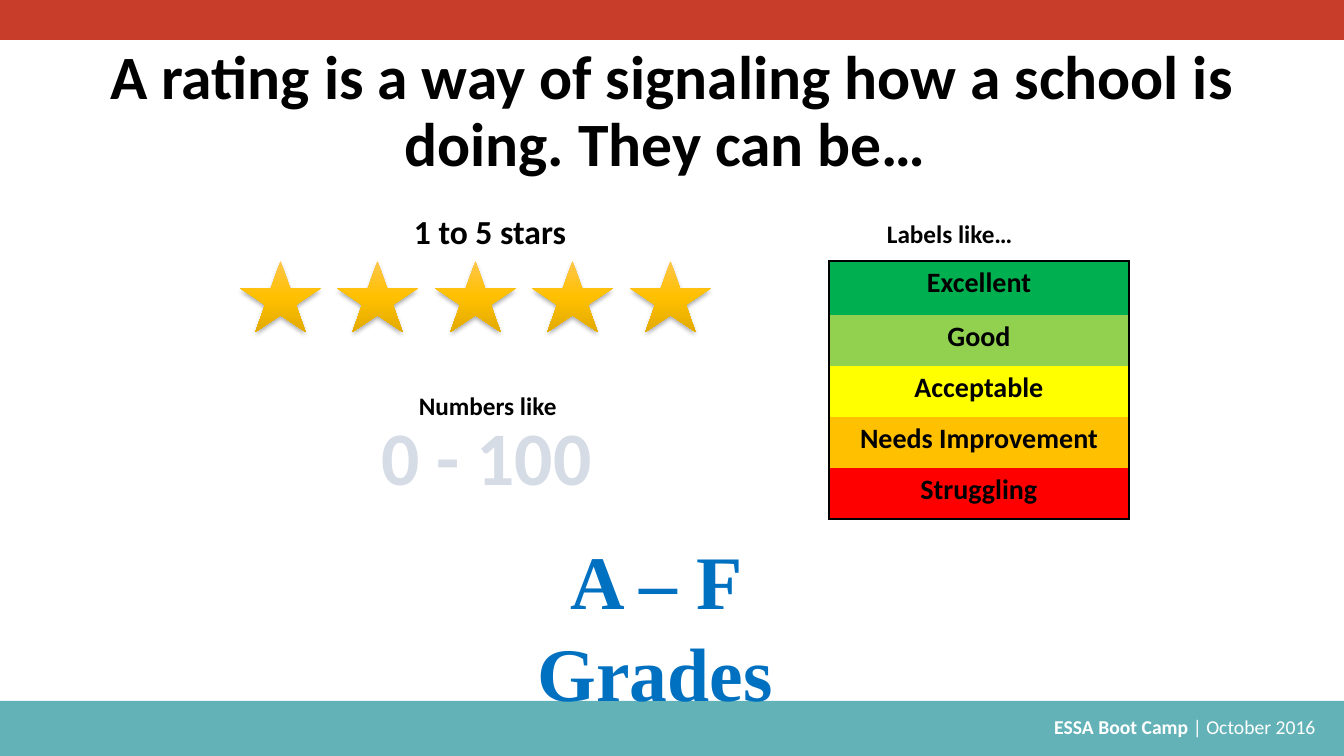
from copy import deepcopy
from dataclasses import dataclass

from lxml import etree
from pptx import Presentation
from pptx import util as u
from pptx.dml.color import RGBColor
from pptx.enum import shapes, text
from pptx.oxml import ns

PX = 914400 / 100.8  # EMU per px
ALIGN = text.PP_ALIGN
NO_TABLE_STYLE = "{2D5ABB26-0587-4C30-8999-92F81FD0307C}"


@dataclass(frozen=True)
class Theme:
    sans: str = "Calibri"
    serif: str = "Times New Roman"
    black: str = "000000"
    white: str = "FFFFFF"
    red: str = "C83C2A"
    teal: str = "63B2B8"
    blue: str = "0070C0"
    pale: str = "D6DCE5"
    gold: tuple[str, ...] = ("FFC64B", "FFC000", "E3AB00")
    title: int = 44
    display: int = 54
    heading: int = 24
    label: int = 18
    cell: int = 20
    footer: int = 14


T = Theme()


@dataclass(frozen=True)
class Box:
    left: int
    top: int
    width: int
    height: int

    def emu(self) -> list[int]:
        return [px(v) for v in (self.left, self.top, self.width, self.height)]


@dataclass(frozen=True)
class Run:
    text: str
    size: int
    color: str = T.black
    font: str = T.sans
    bold: bool = True


@dataclass(frozen=True)
class Caption:
    box: Box
    runs: tuple[Run, ...]
    align: ALIGN = ALIGN.CENTER
    wrap: bool = True
    line_pt: int = 0


@dataclass(frozen=True)
class Rating:
    name: str
    fill: str


BARS = ((Box(0, 701, 1344, 55), T.teal), (Box(0, 0, 1344, 40), T.red))
TITLE_BOX = Box(93, 40, 1159, 146)
TITLE = Run("A rating is a way of signaling how a school is doing. They can be… ", T.title)
CAPTIONS = (
    Caption(Box(484, 710, 846, 34),
            (Run("ESSA Boot Camp ", T.footer, T.white),
             Run("| October 2016 ", T.footer, T.white, bold=False)), ALIGN.RIGHT),
    Caption(Box(338, 206, 304, 50), (Run("1 to 5 stars", T.heading),)),
    Caption(Box(877, 213, 218, 40), (Run("Labels like…", T.label),), ALIGN.LEFT),
    Caption(Box(370, 405, 233, 102), (Run("0 - 100", T.display, T.pale),), wrap=False),
    Caption(Box(409, 385, 219, 41), (Run("Numbers like", T.label),), ALIGN.LEFT),
    Caption(Box(452, 527, 406, 102),
            (Run("A – F Grades", T.display, T.blue, T.serif),), line_pt=66),
)
STAR_COUNT = 5
FIRST_STAR, LAST_STAR_LEFT = Box(240, 261, 81, 71), 630
TABLE_BOX = Box(829, 261, 300, 258)
ROW_HEIGHT = 51
RATINGS = (
    Rating("Excellent", "00B050"),
    Rating("Good", "92D050"),
    Rating("Acceptable", "FFFF00"),
    Rating("Needs Improvement", "FFC000"),
    Rating("Struggling", "FF0000"),
)


def px(n: int) -> int:
    return round(n * PX)


def rgb(color: str) -> RGBColor:
    return RGBColor.from_string(color)


def add_run(p, run: Run) -> None:
    r = p.add_run()
    r.text = run.text
    r.font.name, r.font.size, r.font.bold = run.font, u.Pt(run.size), run.bold
    r.font.color.rgb = rgb(run.color)


def add_bar(s, box: Box, color: str) -> None:
    sp = s.shapes.add_shape(shapes.MSO_SHAPE.RECTANGLE, *box.emu())
    sp.shadow.inherit = False
    sp.fill.solid()
    sp.fill.fore_color.rgb = rgb(color)
    sp.line.fill.background()


def add_caption(s, caption: Caption) -> None:
    tf = s.shapes.add_textbox(*caption.box.emu()).text_frame
    tf.word_wrap = caption.wrap
    tf.auto_size = text.MSO_AUTO_SIZE.SHAPE_TO_FIT_TEXT
    p = tf.paragraphs[0]
    p.alignment = caption.align
    if caption.line_pt:
        p.line_spacing = u.Pt(caption.line_pt)
    for run in caption.runs:
        add_run(p, run)


def add_star(s, box: Box) -> None:
    sp = s.shapes.add_shape(shapes.MSO_SHAPE.STAR_5_POINT, *box.emu())
    sp.line.fill.background()
    # Three-stop gradient running downwards
    sp.fill.gradient()
    sp.fill.gradient_angle = 270
    stop_list = sp._element.spPr.find(".//" + ns.qn("a:gsLst"))
    stop_list.insert(1, deepcopy(stop_list[0]))
    for i, (stop, color) in enumerate(zip(sp.fill.gradient_stops, T.gold)):
        stop.position = i / 2
        stop.color.rgb = rgb(color)
    # Soft shadow below
    sp.shadow.inherit = False
    effects = sp._element.spPr.find(ns.qn("a:effectLst"))
    shadow = etree.SubElement(effects, ns.qn("a:outerShdw"), blurRad=str(u.Pt(3.5)),
                              dist=str(u.Pt(2.2)), dir="5400000", rotWithShape="0")
    tint = etree.SubElement(shadow, ns.qn("a:srgbClr"), val=T.black)
    etree.SubElement(tint, ns.qn("a:alpha"), val="32000")


def set_borders(cell, sides: str) -> None:
    tc_pr = cell._tc.get_or_add_tcPr()
    for i, side in enumerate(sides):
        ln = etree.Element(ns.qn(f"a:ln{side}"), w=str(u.Pt(1)))
        fill = etree.SubElement(ln, ns.qn("a:solidFill"))
        etree.SubElement(fill, ns.qn("a:srgbClr"), val=T.black)
        tc_pr.insert(i, ln)


def add_ratings(s, box: Box, ratings: tuple[Rating, ...]) -> None:
    table = s.shapes.add_table(len(ratings), 1, *box.emu()).table
    table.first_row = table.horz_banding = False
    table._tbl.tblPr.find(ns.qn("a:tableStyleId")).text = NO_TABLE_STYLE
    last = len(ratings) - 1
    for i, rating in enumerate(ratings):
        table.rows[i].height = px(ROW_HEIGHT if i else box.height - last * ROW_HEIGHT)
        cell = table.cell(i, 0)
        cell.fill.solid()
        cell.fill.fore_color.rgb = rgb(rating.fill)
        p = cell.text_frame.paragraphs[0]
        p.alignment = ALIGN.CENTER
        add_run(p, Run(rating.name, T.cell))
        set_borders(cell, "LR" + "T" * (i == 0) + "B" * (i == last))


def set_title(s, box: Box, run: Run) -> None:
    sp = s.shapes.title
    sp.left, sp.top, sp.width, sp.height = box.emu()
    tf = sp.text_frame
    tf.word_wrap = True
    tf.auto_size = text.MSO_AUTO_SIZE.NONE
    tf.vertical_anchor = text.MSO_ANCHOR.MIDDLE
    p = tf.paragraphs[0]
    p.alignment, p.line_spacing = ALIGN.CENTER, 0.9
    add_run(p, run)


def main() -> None:
    prs = Presentation()
    prs.slide_width, prs.slide_height = px(1344), px(756)
    s = prs.slides.add_slide(prs.slide_layouts[5])

    # Frame and title
    for box, color in BARS:
        add_bar(s, box, color)
    set_title(s, TITLE_BOX, TITLE)

    # Evenly spaced stars
    first = FIRST_STAR
    for i in range(STAR_COUNT):
        left = first.left + i * (LAST_STAR_LEFT - first.left) // (STAR_COUNT - 1)
        add_star(s, Box(left, first.top, first.width, first.height))

    # Rating labels and captions
    add_ratings(s, TABLE_BOX, RATINGS)
    for caption in CAPTIONS:
        add_caption(s, caption)
    prs.save("out.pptx")


if __name__ == "__main__":
    main()
